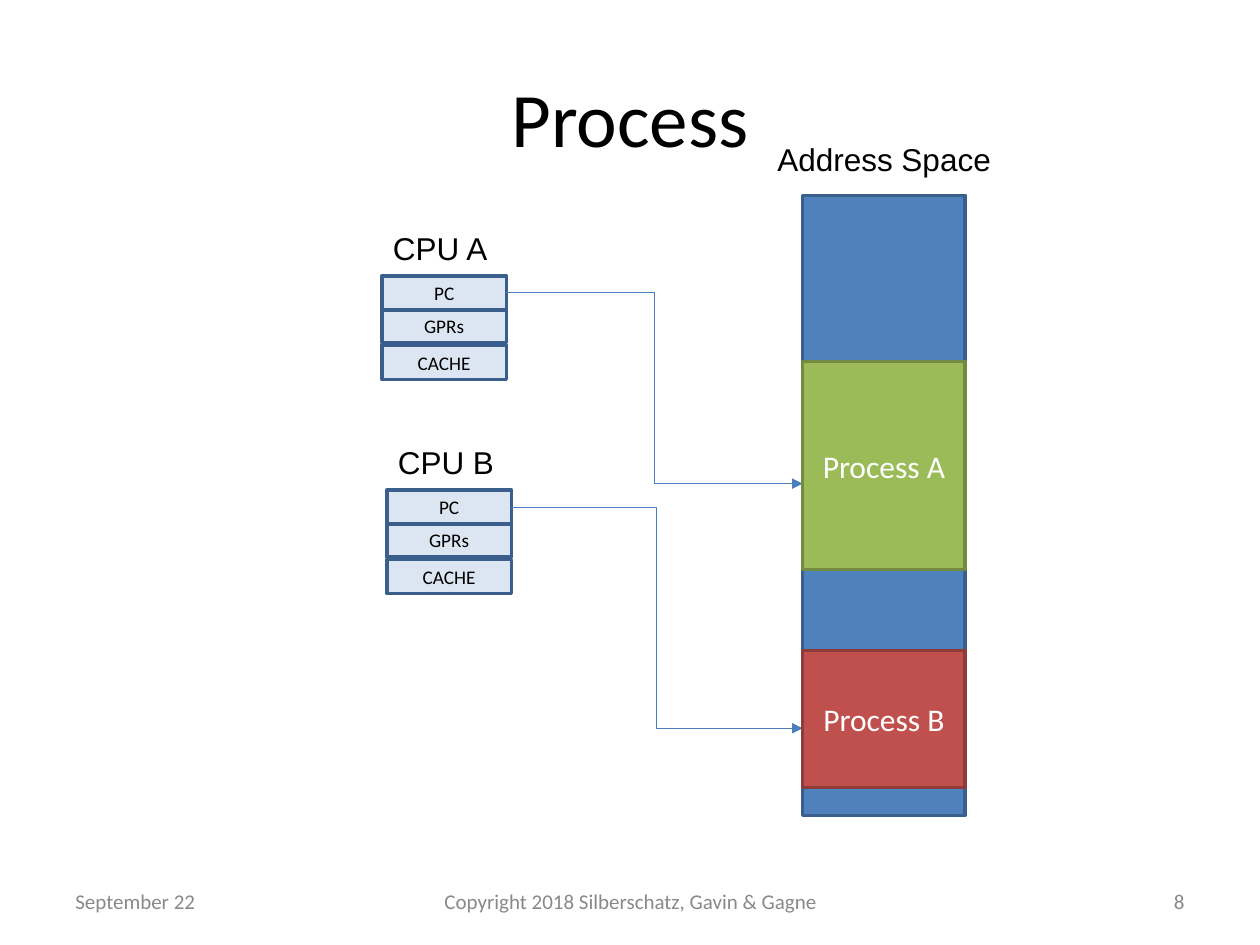
from lxml.etree import SubElement
from pptx import Presentation
from pptx.dml.color import RGBColor
from pptx.enum.shapes import MSO_CONNECTOR, MSO_SHAPE
from pptx.enum.text import MSO_ANCHOR, PP_ALIGN
from pptx.oxml.ns import qn
from pptx.util import Cm, Pt

BLACK = RGBColor(0x00, 0x00, 0x00)
WHITE = RGBColor(0xFF, 0xFF, 0xFF)
GREY = RGBColor(0x89, 0x89, 0x89)
BLUE = RGBColor(0x4F, 0x81, 0xBD)
DARK_BLUE = RGBColor(0x3A, 0x5F, 0x8C)
PALE_BLUE = RGBColor(0xDC, 0xE6, 0xF2)
ARROW_BLUE = RGBColor(0x4B, 0x7E, 0xBC)
GREEN = RGBColor(0x9B, 0xBB, 0x59)
DARK_GREEN = RGBColor(0x73, 0x8A, 0x42)
RED = RGBColor(0xC0, 0x50, 0x4D)
DARK_RED = RGBColor(0x8E, 0x3B, 0x39)

# Content, lengths in centimetres
TITLE = "Process"
FOOTERS = [  # text, left, width, alignment
    ("September 22", 1.27, 5.92, PP_ALIGN.LEFT),
    ("Copyright 2018 Silberschatz, Gavin & Gagne", 8.69, 8.05, PP_ALIGN.CENTER),
    ("8", 18.21, 5.92, PP_ALIGN.RIGHT),
]
REGISTERS = [("GPRs", 0.66), ("CACHE", 1.4), ("PC", 0)]  # name, offset; PC on top
CPUS = [  # name, left, top, height the arrow points at
    ("CPU A", 7.7, 5.56, 9.75),
    ("CPU B", 7.8, 9.88, 14.68),
]
PROCESSES = [  # name, top, height, fill, line
    ("Process A", 7.29, 4.19, GREEN, DARK_GREEN),
    ("Process B", 13.11, 2.77, RED, DARK_RED),
]
MEMORY_LEFT, MEMORY_TOP, MEMORY_WIDTH, MEMORY_HEIGHT = 16.18, 3.94, 3.28, 12.5
REGISTER_WIDTH, REGISTER_HEIGHT = 2.51, 0.69


def write(shape, text, size, color, font="Calibri",
          align=PP_ALIGN.CENTER, anchor=MSO_ANCHOR.MIDDLE):
    frame = shape.text_frame
    frame.word_wrap = True
    frame.vertical_anchor = anchor
    para = frame.paragraphs[0]
    para.alignment = align
    span = para.add_run()
    span.text = text
    span.font.size = Pt(size)
    span.font.name = font
    span.font.color.rgb = color


def add_box(left, top, width, height, fill, line):
    box = slide.shapes.add_shape(MSO_SHAPE.RECTANGLE, Cm(left), Cm(top),
                                 Cm(width), Cm(height))
    box.shadow.inherit = False
    box.fill.solid()
    box.fill.fore_color.rgb = fill
    box.line.color.rgb = line
    box.line.width = Pt(2)
    return box


def add_label(text, left, top, width, height=1.02, **style):
    label = slide.shapes.add_textbox(Cm(left), Cm(top), Cm(width), Cm(height))
    write(label, text, **style)


def add_arrow(source, target_top):
    arrow = slide.shapes.add_connector(
        MSO_CONNECTOR.ELBOW, source.left + source.width,
        source.top + source.height // 2, Cm(MEMORY_LEFT), Cm(target_top))
    arrow.begin_connect(source, 3)
    arrow.line.color.rgb = ARROW_BLUE
    arrow.line.width = Pt(0.5)
    SubElement(arrow.line._get_or_add_ln(), qn("a:tailEnd"), type="triangle")
    SubElement(arrow._element.spPr, qn("a:effectLst"))


deck = Presentation()
deck.slide_width, deck.slide_height = Cm(25.4), Cm(19.05)
slide = deck.slides.add_slide(deck.slide_layouts[5])

# Title and footer line
title = slide.shapes.title
title.left, title.top, title.width, title.height = Cm(1.27), Cm(0.76), Cm(22.86), Cm(3.18)
write(title, TITLE, 44, BLACK)
for text, left, width, align in FOOTERS:
    add_label(text, left, 17.65, width, size=12, color=GREY, align=align)

# Address space
heading = dict(size=18, color=BLACK, font="Arial", align=PP_ALIGN.LEFT,
               anchor=MSO_ANCHOR.TOP)
add_box(MEMORY_LEFT, MEMORY_TOP, MEMORY_WIDTH, MEMORY_HEIGHT, BLUE, DARK_BLUE)
add_label("Address Space", 15.42, 2.69, 5.18, **heading)

# CPUs, each with an arrow from its program counter
for name, left, top, target_top in CPUS:
    registers = {}
    for register, offset in REGISTERS:
        registers[register] = add_box(left, top + offset, REGISTER_WIDTH,
                                      REGISTER_HEIGHT, PALE_BLUE, DARK_BLUE)
        write(registers[register], register, 11, BLACK)
    add_label(name, left - 0.03, top - 1.07, 2.54, **heading)
    add_arrow(registers["PC"], target_top)

# Processes inside the address space
for name, top, height, fill, line in PROCESSES:
    write(add_box(MEMORY_LEFT, top, MEMORY_WIDTH, height, fill, line), name, 18, WHITE)

deck.save("out.pptx")
